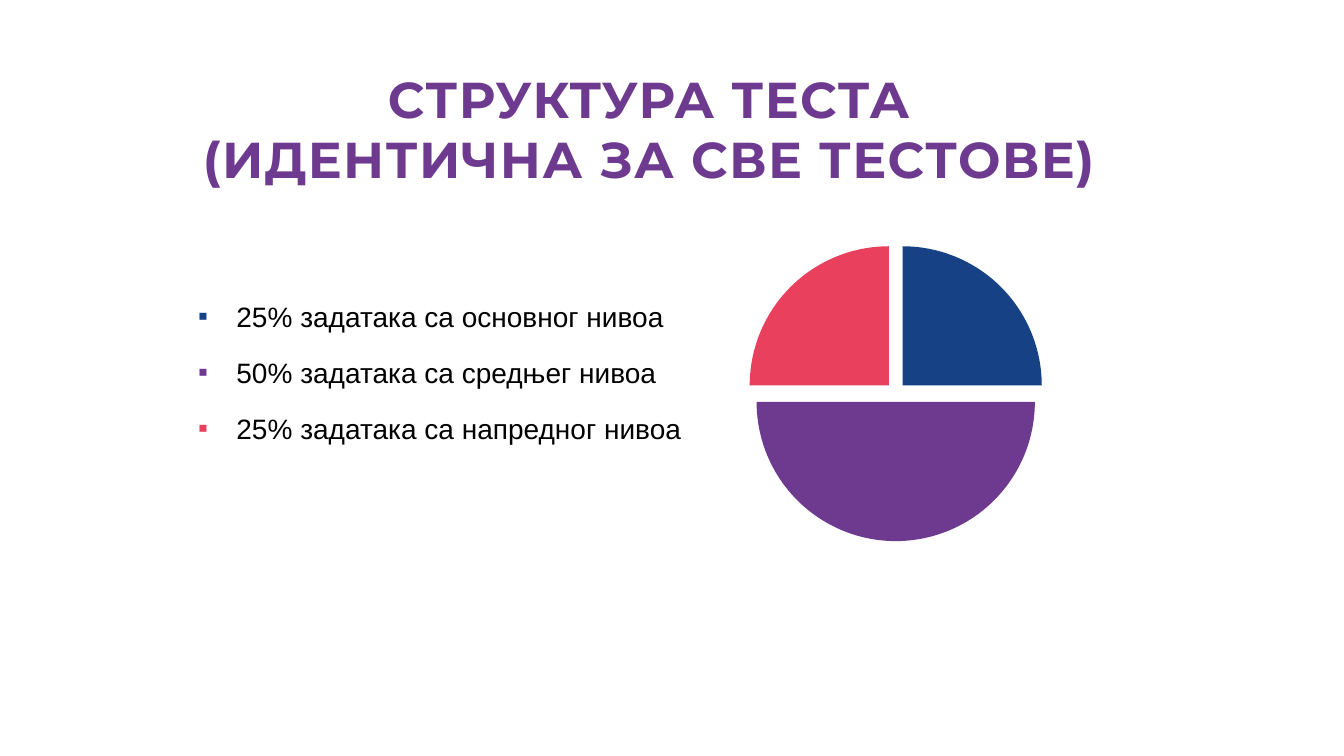
from lxml import etree
from pptx import Presentation
from pptx.chart.data import CategoryChartData
from pptx.dml.color import RGBColor
from pptx.enum.chart import XL_CHART_TYPE as CT
from pptx.enum.text import PP_ALIGN as AL
from pptx.oxml import parse_xml
from pptx.oxml.ns import nsdecls, qn
from pptx.util import Inches, Pt

WIDTH, HEIGHT = 13.33, 7.5
NAVY, PURPLE, RED, BLACK = "164185", "6D3A8F", "E8405D", "000000"
TITLE = {"name": "Montserrat", "size": Pt(36), "bold": True}
BODY = {"name": "Arial", "size": Pt(20)}
LABEL = {"name": "Calibri", "size": Pt(10)}
LEVELS = [
    ("25% задатака са основног нивоа", 25, NAVY),
    ("50% задатака са средњег нивоа", 50, PURPLE),
    ("25% задатака са напредног нивоа", 25, RED),
]


def rgb(value):
    return RGBColor.from_string(value)


def style_font(font, formats, color):
    for name, value in formats.items():
        setattr(font, name, value)
    font.color.rgb = rgb(color)


class Deck:
    """Holds the slide and draws its elements at shares of its size."""

    def __init__(self):
        self.prs = Presentation()
        self.prs.slide_width = Inches(WIDTH)
        self.prs.slide_height = Inches(HEIGHT)
        self.s = self.prs.slides.add_slide(self.prs.slide_layouts[6])

    def box(self, x, y, w, h):
        return [Inches(WIDTH * x), Inches(HEIGHT * y),
                Inches(WIDTH * w), Inches(HEIGHT * h)]

    def text(self, area, lines, formats, color):
        tf = self.s.shapes.add_textbox(*self.box(*area)).text_frame
        tf.word_wrap = True
        for i, line in enumerate(lines):
            p = tf.paragraphs[0] if i == 0 else tf.add_paragraph()
            r = p.add_run()
            r.text = line
            style_font(r.font, formats, color)
        return tf.paragraphs

    def title(self, area, lines):
        for p in self.text(area, lines, TITLE, PURPLE):
            p.alignment = AL.CENTER
            p.runs[0].font._element.set("spc", "100")

    def bullets(self, area, levels):
        paragraphs = self.text(area, [level[0] for level in levels], BODY, BLACK)
        for p, (_, _, color) in zip(paragraphs, levels):
            p.space_before = Pt(16)
            pPr = p._p.get_or_add_pPr()
            pPr.set("marL", str(Inches(0.38)))
            pPr.set("indent", str(Inches(-0.38)))
            bullet_color = etree.SubElement(pPr, qn("a:buClr"))
            etree.SubElement(bullet_color, qn("a:srgbClr"), val=color)
            etree.SubElement(pPr, qn("a:buFont"), typeface="Arial")
            etree.SubElement(pPr, qn("a:buChar"), char="▪")

    def pie(self, area, levels, explosion, layout):
        data = CategoryChartData()
        data.categories = [str(i + 1) for i in range(len(levels))]
        data.add_series("Series 1", [level[1] for level in levels])
        chart = self.s.shapes.add_chart(CT.PIE, *self.box(*area), data).chart
        chart.has_legend = chart.has_title = False
        style_font(chart.font, LABEL, BLACK)
        plot = chart.plots[0]
        plot.vary_by_categories = True
        series = plot.series[0]
        for i, (_, _, color) in enumerate(levels):
            fmt = series.points[i].format
            fmt.fill.solid()
            fmt.fill.fore_color.rgb = rgb(color)
            fmt.line.fill.background()
        series._element.find(qn("c:dPt")).addprevious(
            parse_xml(f'<c:explosion {nsdecls("c")} val="{explosion}"/>'))
        plot_area = chart._chartSpace.chart.plotArea
        for old in plot_area.findall(qn("c:layout")):
            plot_area.remove(old)
        holder = etree.Element(qn("c:layout"))
        manual = etree.SubElement(holder, qn("c:manualLayout"))
        settings = {"layoutTarget": "inner", "xMode": "edge", "yMode": "edge", **layout}
        for name, value in settings.items():
            etree.SubElement(manual, qn(f"c:{name}"), val=str(value))
        plot_area.insert(0, holder)


def main():
    deck = Deck()
    deck.title((0.125, 0.083, 0.716, 0.175),
               ["СТРУКТУРА ТЕСТА", "(ИДЕНТИЧНА ЗА СВЕ ТЕСТОВЕ)"])
    deck.bullets((0.14, 0.389, 0.446, 0.304), LEVELS)
    deck.pie((0.528, 0.303, 0.277, 0.432), LEVELS, 7,
             {"x": 0.1, "y": 0.04, "w": 0.8, "h": 0.92})
    deck.prs.save("out.pptx")


if __name__ == "__main__":
    main()
